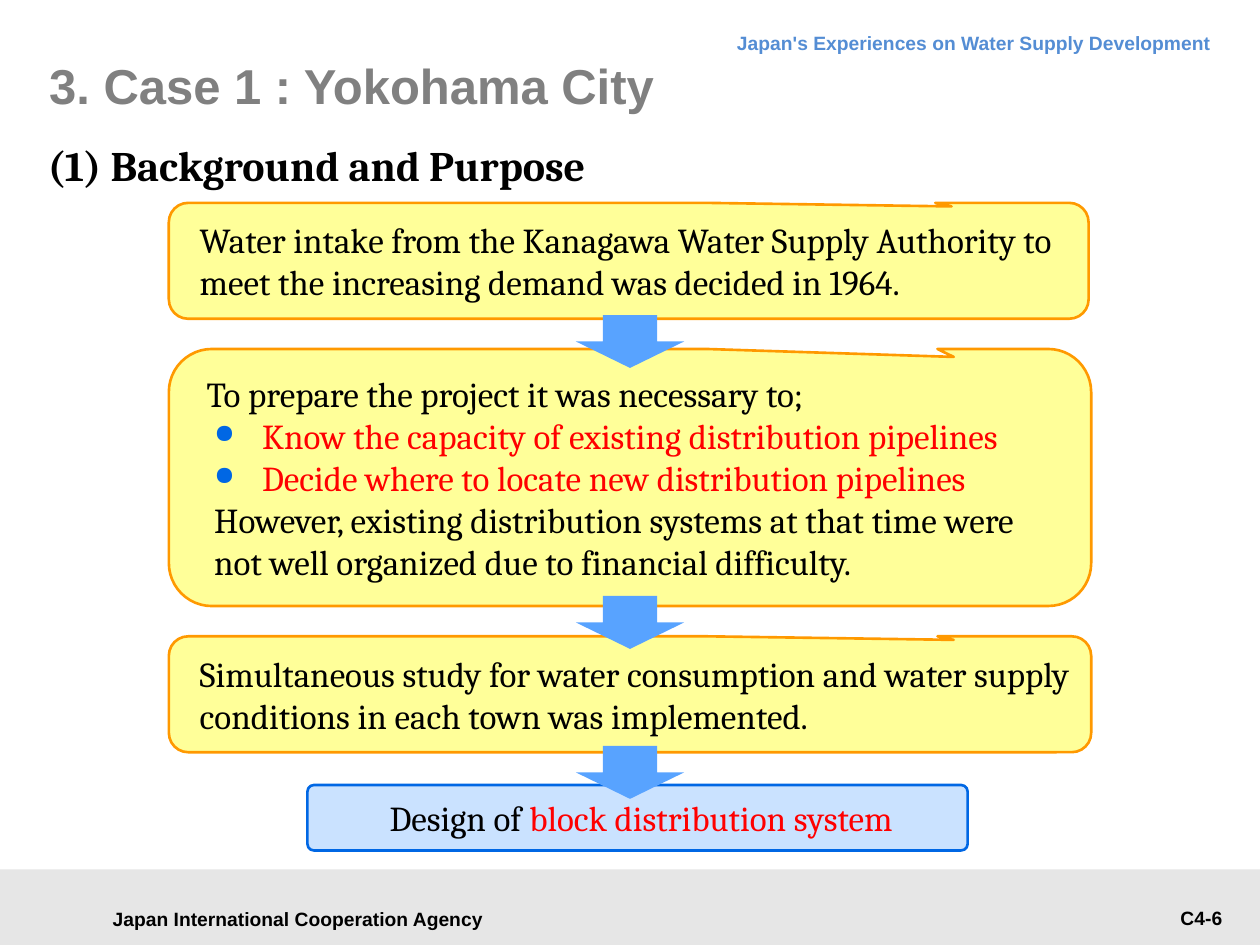
from dataclasses import dataclass

from lxml import etree
from pptx import Presentation
from pptx import util as u
from pptx.dml.color import RGBColor
from pptx.enum import shapes, text
from pptx.oxml.ns import qn

BLACK, RED, BLUE = "000000", "FF0000", "0067E4"
LEFT, CENTER, RIGHT = text.PP_ALIGN.LEFT, text.PP_ALIGN.CENTER, text.PP_ALIGN.RIGHT
TOP, MIDDLE = text.MSO_ANCHOR.TOP, text.MSO_ANCHOR.MIDDLE
CALLOUT = shapes.MSO_SHAPE.ROUNDED_RECTANGULAR_CALLOUT
CALLOUT_ADJUSTMENTS = (0.351, -0.469, 0.167)
BOX_INSETS = (0.2, 0.08, 0.08, 0.08)
LABEL_INSETS = (0.1, 0.05, 0.1, 0.05)


@dataclass
class Span:
    words: str
    color: str = BLACK


@dataclass
class Para:
    spans: list[Span]
    margin: float = 0
    bullet: bool = False


@dataclass
class Callout:
    top: float
    width: float
    height: float
    paras: list[Para]


@dataclass
class Label:
    left: float
    top: float
    width: float
    height: float
    span: Span
    align: text.PP_ALIGN
    anchor: text.MSO_ANCHOR
    line_points: float | None = None


def rgb(color: str) -> RGBColor:
    return RGBColor.from_string(color)


def place(left: float, top: float, width: float, height: float) -> list[u.Length]:
    return [u.Inches(value) for value in (left, top, width, height)]


def set_frame(shape, insets: tuple, anchor, wrap: bool = True):
    frame = shape.text_frame
    frame.auto_size = text.MSO_AUTO_SIZE.NONE
    frame.word_wrap = wrap
    frame.vertical_anchor = anchor
    (frame.margin_left, frame.margin_top,
     frame.margin_right, frame.margin_bottom) = place(*insets)
    return frame


def add_runs(para, spans: list[Span], font: str, size: float, bold: bool = False) -> None:
    for span in spans:
        run = para.add_run()
        run.text = span.words
        run.font.name = font
        run.font.size = u.Pt(size)
        run.font.bold = bold
        run.font.color.rgb = rgb(span.color)


def set_indent(para, margin: float, bullet: bool) -> None:
    properties = para._p.get_or_add_pPr()
    properties.set("marL", str(u.Inches(margin)))
    properties.set("indent", str(u.Inches(-0.38 if bullet else 0)))
    if bullet:
        color = etree.SubElement(properties, qn("a:buClr"))
        etree.SubElement(color, qn("a:srgbClr"), val=BLUE)
        etree.SubElement(properties, qn("a:buSzPct"), val="75000")
        etree.SubElement(properties, qn("a:buChar"), char="●")


def add_filled(slide, kind, area: tuple, fill: str, line: str | None = None):
    shape = slide.shapes.add_shape(kind, *place(*area))
    shape.shadow.inherit = False
    shape.fill.solid()
    shape.fill.fore_color.rgb = rgb(fill)
    if line:
        shape.line.color.rgb = rgb(line)
        shape.line.width = u.Pt(1.5)
    else:
        shape.line.fill.background()
    return shape


def add_label(slide, label: Label) -> None:
    box = slide.shapes.add_textbox(*place(label.left, label.top, label.width, label.height))
    para = set_frame(box, LABEL_INSETS, label.anchor).paragraphs[0]
    para.alignment = label.align
    if label.line_points:
        para.line_spacing = u.Pt(label.line_points)
    add_runs(para, [label.span], "Arial", 11, bold=True)


def add_callout(slide, callout: Callout) -> None:
    area = (1.34, callout.top, callout.width, callout.height)
    shape = add_filled(slide, CALLOUT, area, "FFFF99", "FF9900")
    for index, value in enumerate(CALLOUT_ADJUSTMENTS):
        shape.adjustments[index] = value
    frame = set_frame(shape, BOX_INSETS, MIDDLE)
    for index, item in enumerate(callout.paras):
        para = frame.add_paragraph() if index else frame.paragraphs[0]
        para.alignment = LEFT
        set_indent(para, item.margin, item.bullet)
        add_runs(para, item.spans, "Cambria", 20)


def add_down_arrow(slide, top: float) -> None:
    arrow = add_filled(slide, shapes.MSO_SHAPE.RIGHT_ARROW, (4.79, top, 0.42, 0.86), "58A3FF")
    arrow.rotation = 90


def add_title(slide) -> None:
    title = slide.shapes.title
    title.left, title.top, title.width, title.height = place(0.39, 0.28, 9.61, 0.79)
    para = set_frame(title, (0, 0, 0, 0), MIDDLE).paragraphs[0]
    para.alignment = LEFT
    add_runs(para, [Span("3. Case 1 : Yokohama City", "808080")], "Arial", 28, bold=True)


def add_subtitle(slide) -> None:
    box = slide.shapes.add_textbox(*place(0.28, 1.06, 4.56, 0.45))
    para = set_frame(box, (0.04, 0, 0, 0), TOP, wrap=False).paragraphs[0]
    set_indent(para, 0.06, bullet=False)
    para.line_spacing = u.Pt(32)
    add_runs(para, [Span("(1) Background and Purpose")], "Cambria", 24, bold=True)


def add_result(slide) -> None:
    shape = add_filled(slide, shapes.MSO_SHAPE.ROUNDED_RECTANGLE,
                       (2.44, 6.23, 5.24, 0.52), "CAE2FF", BLUE)
    shape.adjustments[0] = 0.1
    para = set_frame(shape, BOX_INSETS, MIDDLE).paragraphs[0]
    para.alignment = CENTER
    spans = [Span("Design of"), Span(" block distribution system ", RED)]
    add_runs(para, spans, "Cambria", 20)


LABELS = [
    Label(0.71, 7.12, 3.31, 0.34, Span("Japan International Cooperation Agency"), CENTER, MIDDLE),
    Label(2.72, 0.13, 6.99, 0.38,
          Span("Japan's Experiences on Water Supply Development", "548DD4"), RIGHT, TOP, 18),
    Label(8.23, 7.14, 1.57, 0.29, Span("C4-6"), RIGHT, TOP),
]
CALLOUTS = [
    Callout(1.61, 7.3, 0.92, [
        Para([Span("Water intake from the Kanagawa Water Supply Authority to meet "
                   "the increasing demand was decided in 1964.")])]),
    Callout(2.77, 7.32, 2.04, [
        Para([Span("To prepare the project it was necessary to;")]),
        Para([Span("Know the capacity of existing distribution pipelines", RED)], 0.44, True),
        Para([Span("Decide where to locate new distribution pipelines", RED)], 0.44, True),
        Para([Span("However, existing distribution systems at that time were not well "
                   "organized due to financial difficulty.")], 0.06)]),
    Callout(5.05, 7.32, 0.92, [
        Para([Span("Simultaneous study for water consumption and water supply "
                   "conditions in each town was implemented.")])]),
]


def main() -> None:
    deck = Presentation()
    deck.slide_width, deck.slide_height = u.Inches(10), u.Inches(7.5)
    slide = deck.slides.add_slide(deck.slide_layouts[5])
    add_filled(slide, shapes.MSO_SHAPE.RECTANGLE, (0, 6.9, 10, 0.6), "E6E6E6")
    for label in LABELS:
        add_label(slide, label)
    add_title(slide)
    add_result(slide)
    add_subtitle(slide)
    for callout in CALLOUTS:
        add_callout(slide, callout)
    for top in (5.7, 4.51, 2.28):
        add_down_arrow(slide, top)
    deck.save("out.pptx")


if __name__ == "__main__":
    main()
